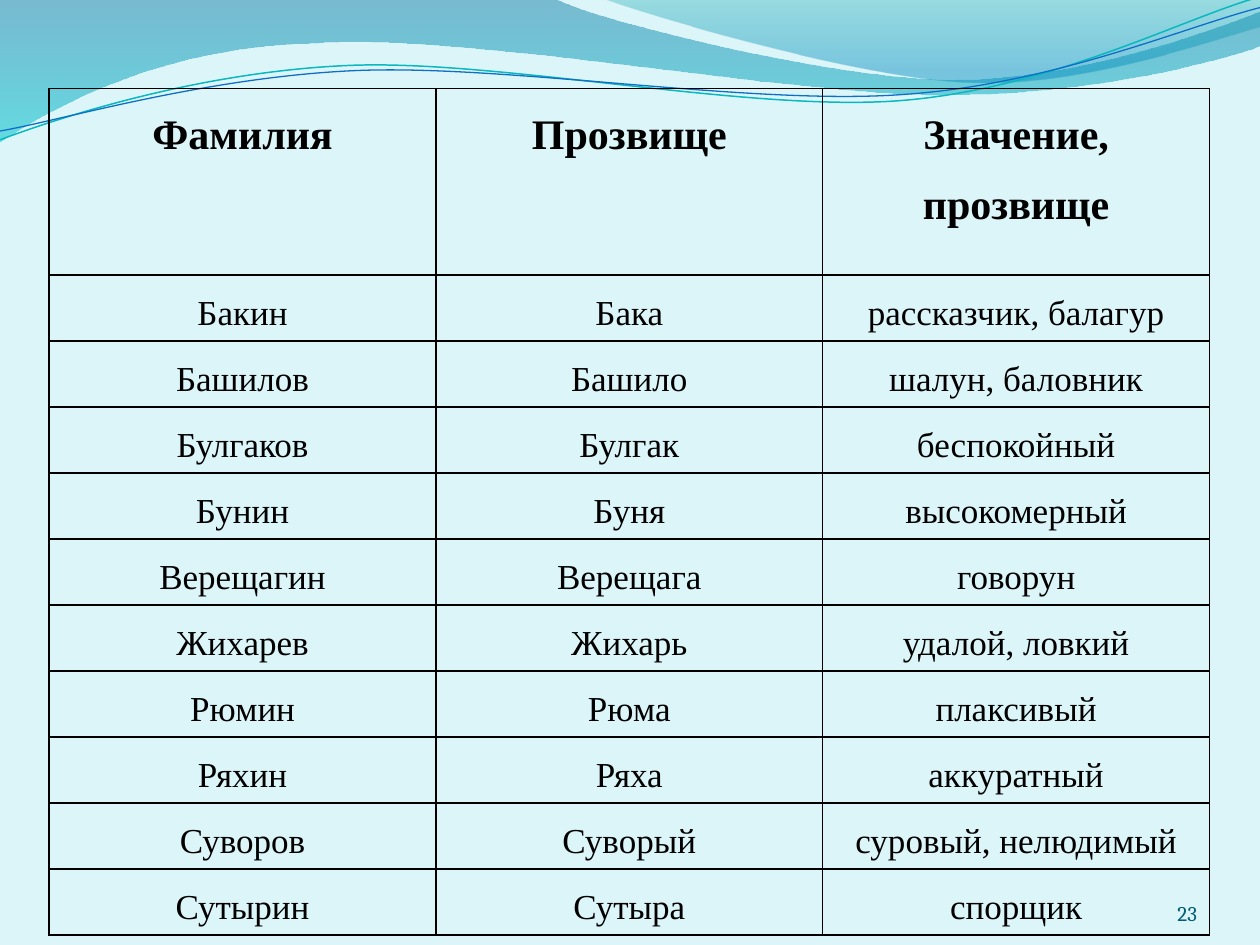
from lxml.etree import SubElement
from math import cos, radians, sin
from pptx import Presentation
from pptx.dml.color import RGBColor
from pptx.enum.text import MSO_ANCHOR, PP_ALIGN
from pptx.oxml.ns import qn
from pptx.util import Inches, Pt

WIDTH, HEIGHT = 10, 7.5
LINE_ROTATION = -2.7
COLUMN_WIDTH = 3.07
TABLE_LEFT, TABLE_TOP = Inches(0.39), Pt(50.7)
TABLE_HEIGHT, HEADER_HEIGHT = 6.72, 1.48

COLORS = {
    "background": "DBF5F9",
    "text": "000000",
    "number": "045D75",
    "wave_top": "0074A1",
    "wave_bottom": "00C6CF",
    "crest_top": "00A1A9",
    "crest_bottom": "008BBF",
    "teal_line": "0AB8BF",
    "blue_line": "0F6FC6",
}

ROWS = [
    ("Фамилия", "Прозвище", "Значение, прозвище"),
    ("Бакин", "Бака", "рассказчик, балагур"),
    ("Башилов", "Башило", "шалун, баловник"),
    ("Булгаков", "Булгак", "беспокойный"),
    ("Бунин", "Буня", "высокомерный"),
    ("Верещагин", "Верещага", "говорун"),
    ("Жихарев", "Жихарь", "удалой, ловкий"),
    ("Рюмин", "Рюма", "плаксивый"),
    ("Ряхин", "Ряха", "аккуратный"),
    ("Суворов", "Суворый", "суровый, нелюдимый"),
    ("Сутырин", "Сутыра", "спорщик"),
]

WAVE_BOX = (-0.01, -0.01, 10.02, 1.14)
WAVE = [
    (0, 0), (4.4, -0.01),
    (4.76, 0.17, 6.64, 0.63, 7.58, 0.63),
    (8.53, 0.63, 9.58, 0.26, 10, 0.09),
    (10.01, 0.36),
    (9.83, 0.44, 8.7, 0.76, 7.46, 0.75),
    (6.22, 0.75, 3.82, 0.28, 2.57, 0.34),
    (1.29, 0.36, 0.46, 0.83, -0.01, 1.13),
    (0, 0),
]
CREST_BOX = (4.79, -0.01, 5.21, 0.7)
CREST = [
    (4.79, -0.01),
    (5.09, 0.11, 6.82, 0.62, 7.69, 0.65),
    (8.56, 0.69, 9.61, 0.32, 10, 0.21),
    (10, 0), (4.79, -0.01),
]
TEAL_BOX = (-0.02, 0.22, 10.02, 0.71)
TEAL_LINE = [
    (0, 1.11),
    (0.48, 0.93, 1.58, 0.57, 2.77, 0.52),
    (3.95, 0.47, 5.93, 0.89, 7.13, 0.8),
    (8.33, 0.71, 9.38, 0.15, 9.98, -0.02),
]
BLUE_BOX = (-0.02, 0.3, 10.03, 0.58)
BLUE_LINE = [
    (0, 1.04),
    (0.47, 0.96, 1.64, 0.61, 2.83, 0.56),
    (4.03, 0.51, 5.97, 0.84, 7.17, 0.75),
    (8.36, 0.67, 9.41, 0.21, 10, 0.06),
]


def color(name):
    return RGBColor.from_string(COLORS[name])


def local_points(segment, box, rotation):
    left, top, width, height = box
    cosine, sine = cos(radians(rotation)), sin(radians(rotation))
    for x, y in zip(segment[::2], segment[1::2]):
        across, down = x - left - width / 2, y - top - height / 2
        yield (
            Inches(across * cosine + down * sine + width / 2),
            Inches(down * cosine - across * sine + height / 2),
        )


def add_outline(slide, box, segments, close, rotation=0):
    outline = [list(local_points(segment, box, rotation)) for segment in segments]
    builder = slide.shapes.build_freeform(*outline[0][0])
    builder.add_line_segments([points[-1] for points in outline[1:]], close=close)
    shape = builder.convert_to_shape()
    shape.left, shape.top, shape.width, shape.height = map(Inches, box)
    shape.rotation = rotation
    shape.shadow.inherit = False
    outline_path = next(shape.element.iter(qn("a:path")))
    outline_path.set("w", str(shape.width))
    outline_path.set("h", str(shape.height))
    for command, points in zip(list(outline_path), outline):
        if len(points) == 3:
            command.tag = qn("a:cubicBezTo")
        for point in list(command):
            command.remove(point)
        for x, y in points:
            SubElement(command, qn("a:pt"), x=str(x), y=str(y))
    return shape


def add_gradient_wave(slide, box, segments, stops):
    shape = add_outline(slide, box, segments, True)
    shape.line.fill.background()
    shape.fill.gradient()
    shape.fill.gradient_angle = 270
    for stop, (position, name, _) in zip(shape.fill.gradient_stops, stops):
        stop.position = position
        stop.color.rgb = color(name)
    for element, (_, _, opacity) in zip(shape.element.iter(qn("a:gs")), stops):
        SubElement(element[0], qn("a:alpha"), val=str(opacity * 1000))


def add_curved_line(slide, box, segments, name, width):
    shape = add_outline(slide, box, segments, False, LINE_ROTATION)
    shape.fill.background()
    shape.line.color.rgb = color(name)
    shape.line.width = Pt(width)


def format_runs(paragraph, font_name, size, name, bold=False):
    for run in paragraph.runs:
        run.font.name = font_name
        run.font.size = Pt(size)
        run.font.bold = bold
        run.font.color.rgb = color(name)


def add_borders(cell):
    properties = cell._tc.get_or_add_tcPr()
    for side in ("lnL", "lnR", "lnT", "lnB"):
        line = SubElement(properties, qn(f"a:{side}"), w=str(Pt(1)))
        fill = SubElement(line, qn("a:solidFill"))
        SubElement(fill, qn("a:srgbClr"), val=COLORS["text"])


def fill_cell(cell, text, is_header):
    cell.margin_left = cell.margin_right = Inches(0.07)
    cell.margin_top = cell.margin_bottom = 0
    add_borders(cell)
    cell.fill.background()
    cell.text_frame.text = text
    paragraph = cell.text_frame.paragraphs[0]
    paragraph.alignment = PP_ALIGN.CENTER
    paragraph.line_spacing = 1.5
    format_runs(paragraph, "Times New Roman", 24 if is_header else 20, "text", is_header)


def add_surname_table(slide):
    columns = len(ROWS[0])
    row_height = (TABLE_HEIGHT - HEADER_HEIGHT) / (len(ROWS) - 1)
    table = slide.shapes.add_table(
        len(ROWS), columns, TABLE_LEFT, TABLE_TOP,
        Inches(COLUMN_WIDTH * columns), Inches(TABLE_HEIGHT),
    ).table
    table.first_row = False
    table.horz_banding = False
    for row_index, texts in enumerate(ROWS):
        is_header = row_index == 0
        table.rows[row_index].height = Inches(HEADER_HEIGHT if is_header else row_height)
        for column_index, text in enumerate(texts):
            fill_cell(table.cell(row_index, column_index), text, is_header)


def add_slide_number(slide, text):
    box = slide.shapes.add_textbox(Inches(8.67), Inches(6.95), Inches(0.83), Inches(0.4))
    frame = box.text_frame
    frame.word_wrap = True
    frame.vertical_anchor = MSO_ANCHOR.BOTTOM
    frame.margin_left = frame.margin_right = frame.margin_top = frame.margin_bottom = 0
    frame.text = text
    paragraph = frame.paragraphs[0]
    paragraph.alignment = PP_ALIGN.RIGHT
    format_runs(paragraph, "Cambria", 12, "number")


def main():
    presentation = Presentation()
    presentation.slide_width = Inches(WIDTH)
    presentation.slide_height = Inches(HEIGHT)
    slide = presentation.slides.add_slide(presentation.slide_layouts[6])
    slide.background.fill.solid()
    slide.background.fill.fore_color.rgb = color("background")
    add_gradient_wave(slide, WAVE_BOX, WAVE, [(0, "wave_top", 45), (1, "wave_bottom", 55)])
    add_gradient_wave(slide, CREST_BOX, CREST, [(0, "crest_top", 30), (0.8, "crest_bottom", 45)])
    add_curved_line(slide, TEAL_BOX, TEAL_LINE, "teal_line", 0.85)
    add_curved_line(slide, BLUE_BOX, BLUE_LINE, "blue_line", 0.75)
    add_surname_table(slide)
    add_slide_number(slide, "23")
    presentation.save("out.pptx")


if __name__ == "__main__":
    main()
